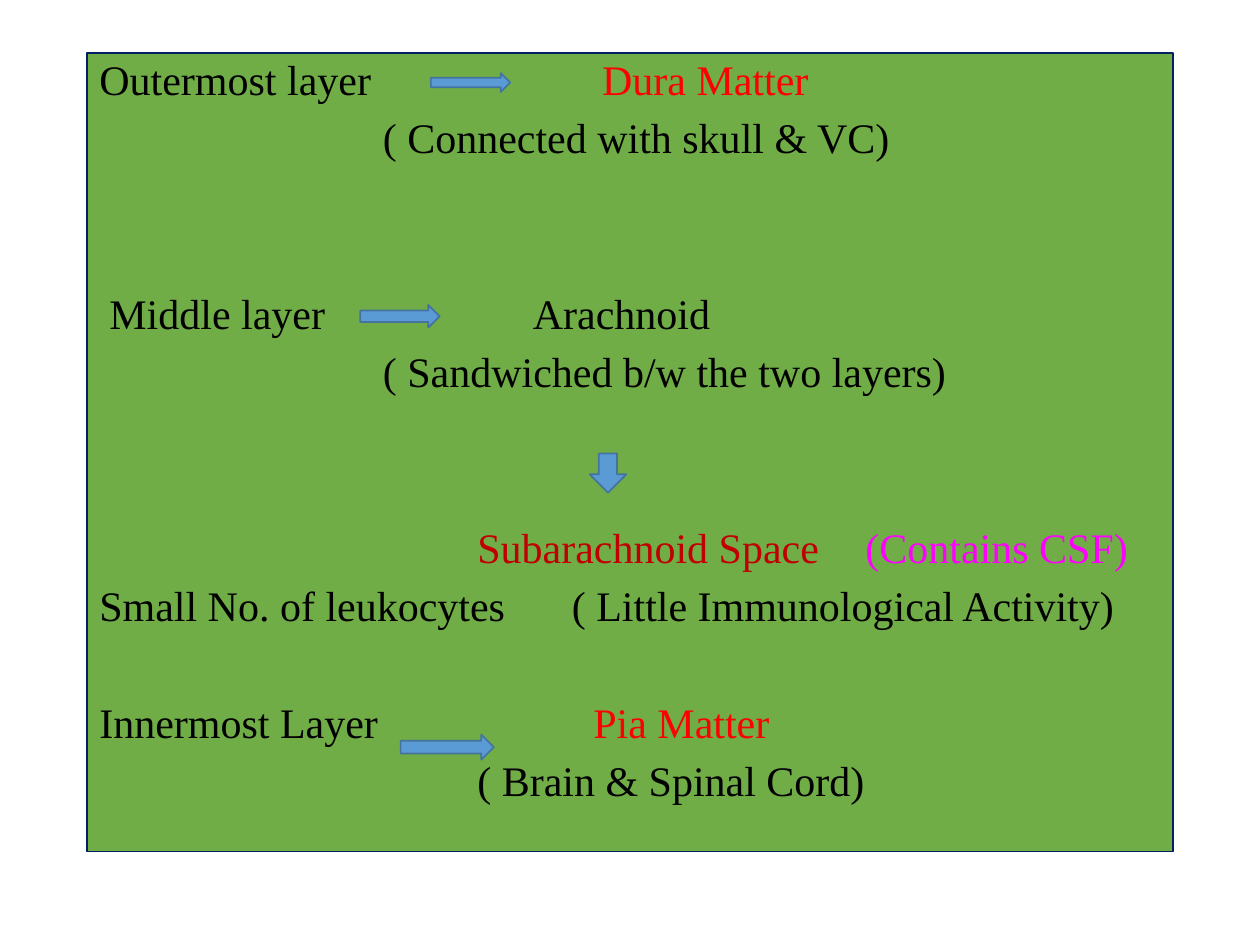
from lxml import etree
from pptx import Presentation
from pptx import util as u
from pptx.dml.color import RGBColor
from pptx.enum import shapes, text
from pptx.oxml.ns import qn

BLACK, RED, DARK_RED, MAGENTA = "000000", "FF0000", "C00000", "FF00FF"
LINE_PITCH, LINE_GAP = 33.4, 7.5

LINES = [
    (0, [(0, "Outermost layer", BLACK), (3.99, "Dura Matter", RED)]),
    (0, [(2.25, "( Connected with skull & VC)", BLACK)]),
    (2, [(0.08, "Middle layer", BLACK), (3.44, "Arachnoid", BLACK)]),
    (0, [(2.25, "( Sandwiched b/w the two layers)", BLACK)]),
    (2, [(3, "Subarachnoid Space", DARK_RED), (6.08, "(Contains CSF)", MAGENTA)]),
    (0, [(0, "Small No. of leukocytes", BLACK),
         (3.75, "( Little Immunological Activity)", BLACK)]),
    (1, [(0, "Innermost Layer", BLACK), (3.92, "Pia Matter", RED)]),
    (0, [(3, "( Brain & Spinal Cord)", BLACK)]),
]

RIGHT, DOWN = shapes.MSO_SHAPE.RIGHT_ARROW, shapes.MSO_SHAPE.DOWN_ARROW
ARROWS = [
    (RIGHT, 3.42, 0.58, 0.63, 0.15),
    (RIGHT, 2.86, 2.42, 0.63, 0.18),
    (RIGHT, 3.18, 5.83, 0.74, 0.2),
    (DOWN, 4.68, 3.6, 0.29, 0.31),
]


def paint(shape, fill, line, width):
    shape.fill.solid()
    shape.fill.fore_color.rgb = RGBColor.from_string(fill)
    shape.line.color.rgb = RGBColor.from_string(line)
    shape.line.width = u.Pt(width)


def add_run(paragraph, wording, color=BLACK, size=24, name="Times New Roman"):
    run = paragraph.add_run()
    run.text = wording
    run.font.size = u.Pt(size)
    run.font.name = name
    run.font.color.rgb = RGBColor.from_string(color)


def add_line(paragraph, empty_lines, pieces, first):
    tabs = etree.SubElement(paragraph._p.get_or_add_pPr(), qn("a:tabLst"))
    for offset, wording, color in pieces:
        if offset:
            etree.SubElement(tabs, qn("a:tab"), pos=str(u.Inches(offset)), algn="l")
            wording = "\t" + wording
        add_run(paragraph, wording, color=color)
    paragraph.line_spacing = 0.9
    paragraph.space_before = u.Pt(0 if first else LINE_GAP + empty_lines * LINE_PITCH)


presentation = Presentation()
presentation.slide_width, presentation.slide_height = u.Inches(10), u.Inches(7.5)
slide = presentation.slides.add_slide(presentation.slide_layouts[6])

panel = slide.shapes.add_textbox(*map(u.Inches, (0.69, 0.42, 8.62, 6.34)))
paint(panel, "70AD47", "002060", 0.75)
frame = panel.text_frame
frame.word_wrap = True
frame.auto_size = text.MSO_AUTO_SIZE.NONE
frame.vertical_anchor = text.MSO_ANCHOR.TOP
for index, (empty_lines, pieces) in enumerate(LINES):
    paragraph = frame.add_paragraph() if index else frame.paragraphs[0]
    add_line(paragraph, empty_lines, pieces, first=index == 0)

for kind, *place in ARROWS:
    arrow = slide.shapes.add_shape(kind, *map(u.Inches, place))
    arrow.shadow.inherit = False
    paint(arrow, "5B9BD5", "43739E", 1)

presentation.save("out.pptx")
